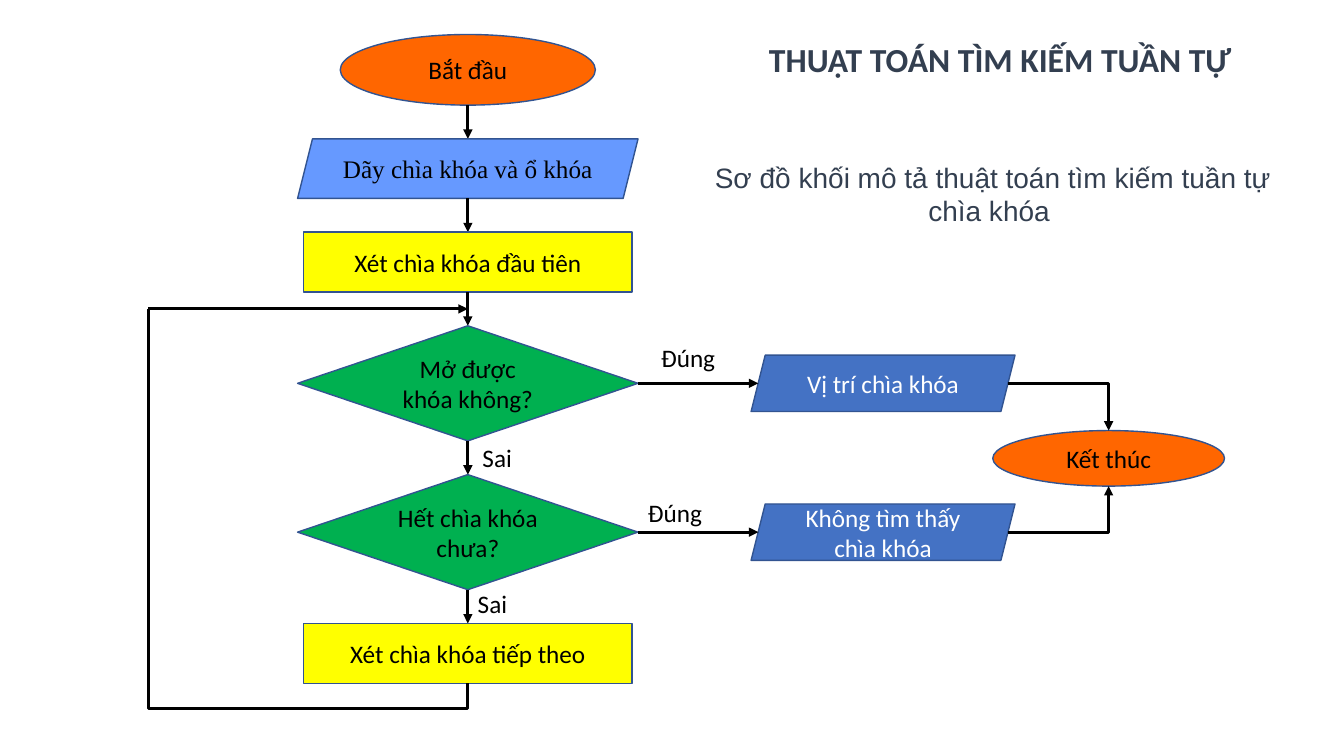
from lxml import etree
from pptx import Presentation
from pptx.dml.color import RGBColor
from pptx.enum import shapes, text
from pptx.oxml import ns
from pptx.util import Cm, Pt

COLORS = {
    "terminal": "FF6600", "input": "6699FF", "step": "FFFF00",
    "decision": "00B050", "result": "4472C4", "outline": "325491",
    "black": "000000", "white": "FFFFFF", "heading": "333F50",
}
KINDS = {
    "terminal": shapes.MSO_SHAPE.OVAL, "input": shapes.MSO_SHAPE.PARALLELOGRAM,
    "step": shapes.MSO_SHAPE.RECTANGLE, "decision": shapes.MSO_SHAPE.DIAMOND,
    "result": shapes.MSO_SHAPE.PARALLELOGRAM,
}
GAP = 0.85    # vertical space between the steps, in cm
SLANT = 0.18  # half of the slant of a result box, in cm


def rgb(name):
    return RGBColor.from_string(COLORS[name])


def write(frame, wording, size=18, font="Calibri", color="black", bold=False,
          align=text.PP_ALIGN.CENTER):
    frame.word_wrap = True
    paragraph = frame.paragraphs[0]
    paragraph.alignment = align
    run = paragraph.add_run()
    run.text = wording
    run.font.size, run.font.name, run.font.bold = Pt(size), font, bold
    run.font.color.rgb = rgb(color)


def add_label(slide, wording, left, top, width=3.81, height=1.02,
              align=text.PP_ALIGN.LEFT, **style):
    label = slide.shapes.add_textbox(Cm(left), Cm(top), Cm(width), Cm(height))
    write(label.text_frame, wording, align=align, **style)


def add_node(slide, kind, wording, left, top, width, height, **style):
    node = slide.shapes.add_shape(KINDS[kind], Cm(left), Cm(top), Cm(width), Cm(height))
    node.shadow.inherit = False
    node.fill.solid()
    node.fill.fore_color.rgb = rgb(kind)
    node.line.color.rgb = rgb("outline")
    node.line.width = Pt(1)
    node.text_frame.vertical_anchor = text.MSO_ANCHOR.MIDDLE
    write(node.text_frame, wording, **style)


def add_link(slide, start, end, bent=False, arrow=True):
    kind = shapes.MSO_CONNECTOR.ELBOW if bent else shapes.MSO_CONNECTOR.STRAIGHT
    link = slide.shapes.add_connector(kind, *(Cm(v) for v in (*start, *end)))
    link.line.color.rgb = rgb("black")
    link.line.width = Pt(2.25)
    if arrow:
        etree.SubElement(link.line._get_or_add_ln(), ns.qn("a:tailEnd"), type="triangle")
    properties = link._element.spPr
    etree.SubElement(properties, ns.qn("a:effectLst"))
    return properties


def add_main_flow(slide, left, top, width):
    """Draw the steps from top to bottom; return the decision centres."""
    center = left + width / 2
    steps = [
        ("terminal", "Bắt đầu", 6.43, 1.78, {}),
        ("input", "Dãy chìa khóa và ổ khóa", width, 1.5, {"font": "Times New Roman"}),
        ("step", "Xét chìa khóa đầu tiên", 8.28, 1.51, {}),
        ("decision", "Mở được khóa không?", width, 2.9, {}),
        ("decision", "Hết chìa khóa chưa?", width, 2.9, {}),
        ("step", "Xét chìa khóa tiếp theo", 8.28, 1.51, {}),
    ]
    decisions = []
    for index, (kind, wording, step_width, height, style) in enumerate(steps):
        if index:
            add_link(slide, (center, top - GAP), (center, top))
        add_node(slide, kind, wording, center - step_width / 2, top, step_width, height, **style)
        if kind == "decision":
            decisions.append(top + height / 2)
        top += height + GAP
    add_loop(slide, center, top - GAP, 3.74, decisions[0] - 1.45 - GAP / 2)
    add_label(slide, "Sai", center + 0.12, decisions[0] + 1.35)
    add_label(slide, "Sai", center, decisions[1] + 1.3)
    return decisions


def add_loop(slide, center, bottom, left, top):
    """Lead back from the last step, around the left, to the first decision."""
    reach, rise = center - left, bottom - top
    mid_x, mid_y = (center + left) / 2, (bottom + top) / 2
    # The elbow is laid out flat and then turned by a quarter
    back = add_link(slide, (mid_x + rise / 2, mid_y - reach / 2),
                    (mid_x - rise / 2, mid_y + reach / 2), bent=True, arrow=False)
    back.find(ns.qn("a:xfrm")).set("rot", "5400000")
    adjustments = back.find(ns.qn("a:prstGeom")).find(ns.qn("a:avLst"))
    etree.SubElement(adjustments, ns.qn("a:gd"), name="adj1", fmla="val -6700")
    add_link(slide, (left, top), (center, top))


def add_results(slide, left, right, decisions):
    """Draw the two outcomes and the end that both lead to."""
    width, height = 6.65, 1.42
    end_left, end_top, end_width, end_height = 25.02, 10.85, 5.84, 1.4
    end_center = end_left + end_width / 2
    add_node(slide, "terminal", "Kết thúc", end_left, end_top, end_width, end_height)
    outcomes = [
        ("Vị trí chìa khóa", 16.41, 1.17, end_top),
        ("Không tìm thấy chìa khóa", 16.08, 1.0, end_top + end_height),
    ]
    for middle, (wording, label_left, lift, end_y) in zip(decisions, outcomes):
        add_node(slide, "result", wording, left, middle - height / 2, width, height,
                 color="white")
        add_link(slide, (right, middle), (left + SLANT, middle))
        add_label(slide, "Đúng", label_left, middle - lift)
        elbow = add_link(slide, (left + width - SLANT, middle), (end_center, end_y), bent=True)
        elbow.find(ns.qn("a:prstGeom")).set("prst", "bentConnector2")


def add_headings(slide, left, top):
    add_label(slide, "THUẬT TOÁN TÌM KIẾM TUẦN TỰ", left + 1.98, top, 12.75, 1.27,
              size=24, color="heading", bold=True)
    add_label(slide, "Sơ đồ khối mô tả thuật toán tìm kiếm tuần tự chìa khóa ",
              left, top + 3.05, 15.75, 1.96, size=20, font="Arial", color="heading",
              align=text.PP_ALIGN.CENTER)


def main():
    deck = Presentation()
    deck.slide_width, deck.slide_height = Cm(33.87), Cm(19.05)
    slide = deck.slides.add_slide(deck.slide_layouts[6])
    flow_left, flow_width = 7.5, 8.58
    decisions = add_main_flow(slide, flow_left, 0.87, flow_width)
    add_results(slide, 18.93, flow_left + flow_width, decisions)
    add_headings(slide, 17.15, 0.86)
    deck.save("out.pptx")


if __name__ == "__main__":
    main()
